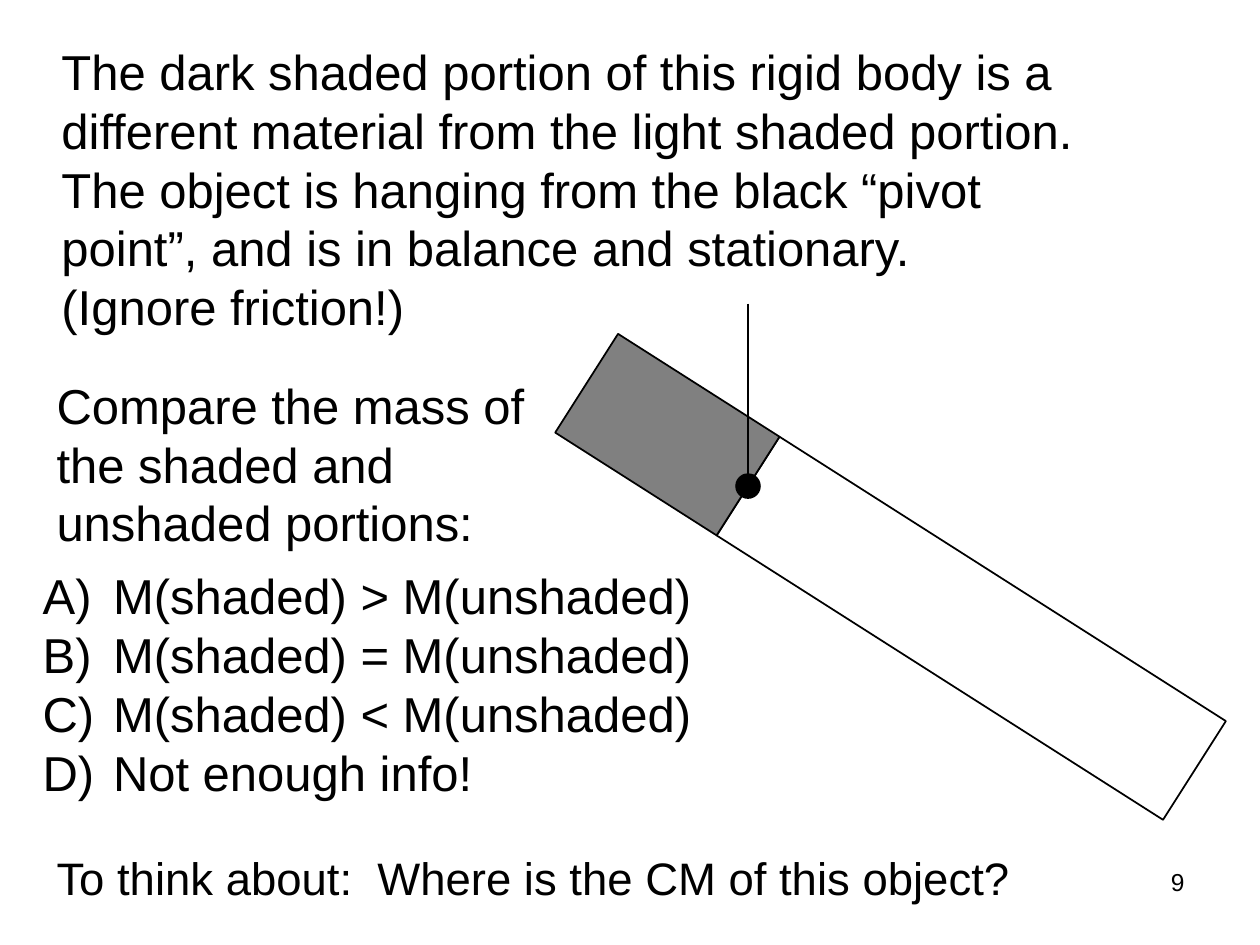
"""Build a slide asking how the masses of a balanced two-part rigid body compare."""
from math import cos, radians, sin

from lxml import etree
from pptx import Presentation
from pptx import util as u
from pptx.dml.color import RGBColor
from pptx.enum import shapes, text
from pptx.oxml.ns import qn

COLORS = {"ink": "000000", "shaded": "808080"}
FONT = "Arial"
TEXTS = [
    {"box": (0.99, 0.71, 21.16, 6.25), "size": 28, "lines": [
        "The dark shaded portion of this rigid body is a different material "
        "from the light shaded portion.",
        "The object is hanging from the black “pivot point”, and is in balance "
        "and stationary.\v(Ignore friction!)"]},
    {"box": (0.89, 7.44, 10.39, 3.84), "size": 28, "lines": [
        "Compare the mass of the shaded and unshaded portions:"]},
    {"box": (0.61, 11.28, 13.67, 5.05), "size": 28, "lettered": True, "lines": [
        "M(shaded) > M(unshaded)",
        "M(shaded) = M(unshaded)",
        "M(shaded) < M(unshaded)",
        "Not enough info!"]},
    {"box": (0.89, 17.02, 19.91, 1.37), "size": 26, "lines": [
        "To think about:  Where is the CM of this object?"]},
    {"box": (18.21, 17.35, 5.92, 1.32), "size": 14, "lines": ["9"],
     "align": text.PP_ALIGN.RIGHT},
]
PIVOT = (15.08, 9.8)
PIVOT_SIZE = 0.48
TILT = 32.5
BAR_HEIGHT = 2.36
BARS = [(10.67, 1, None), (3.86, -1, "shaded")]
STRING_TOP = 6.12
LETTER_INDENT = u.Cm(1.42)


def color(name):
    return RGBColor.from_string(COLORS[name])


def add_text(slide, box, size, lines, lettered=False, align=text.PP_ALIGN.LEFT):
    frame = slide.shapes.add_textbox(*map(u.Cm, box)).text_frame
    frame.word_wrap = True
    frame.text = "\n".join(lines)
    for paragraph in frame.paragraphs:
        paragraph.alignment = align
        paragraph.font.name = FONT
        paragraph.font.size = u.Pt(size)
        paragraph.font.color.rgb = color("ink")
        if lettered:
            properties = paragraph._p.get_or_add_pPr()
            properties.set("marL", str(LETTER_INDENT))
            properties.set("indent", str(-LETTER_INDENT))
            bullet_font = etree.Element(qn("a:buFont"), typeface=FONT)
            bullet = etree.Element(qn("a:buAutoNum"), type="alphaUcParenR")
            properties.insert(0, bullet_font)
            properties.insert(1, bullet)


def add_centred(slide, kind, center, width, height, fill):
    left, top = center[0] - width / 2, center[1] - height / 2
    shape = slide.shapes.add_shape(kind, *map(u.Cm, (left, top, width, height)))
    shape.shadow.inherit = False
    if fill:
        shape.fill.solid()
        shape.fill.fore_color.rgb = color(fill)
    else:
        shape.fill.background()
    shape.line.color.rgb = color("ink")
    shape.line.width = u.Pt(1)
    return shape


def add_string(slide):
    x, y = PIVOT
    string = slide.shapes.add_connector(
        shapes.MSO_CONNECTOR.STRAIGHT, *map(u.Cm, (x, STRING_TOP, x, y)))
    string.line.color.rgb = color("ink")
    string.line.width = u.Pt(1)
    etree.SubElement(string.line._get_or_add_ln(), qn("a:tailEnd"), type="arrow")
    etree.SubElement(string._element.spPr, qn("a:effectLst"))


def main():
    presentation = Presentation()
    presentation.slide_width, presentation.slide_height = u.Cm(25.4), u.Cm(19.05)
    slide = presentation.slides.add_slide(presentation.slide_layouts[6])
    x, y = PIVOT
    for length, side, fill in BARS:
        reach = side * length / 2
        center = (x + reach * cos(radians(TILT)), y + reach * sin(radians(TILT)))
        bar = add_centred(slide, shapes.MSO_SHAPE.RECTANGLE, center,
                          length, BAR_HEIGHT, fill)
        bar.rotation = TILT
    add_centred(slide, shapes.MSO_SHAPE.OVAL, PIVOT, PIVOT_SIZE, PIVOT_SIZE, "ink")
    add_string(slide)
    for item in TEXTS:
        add_text(slide, **item)
    presentation.save("out.pptx")


if __name__ == "__main__":
    main()
